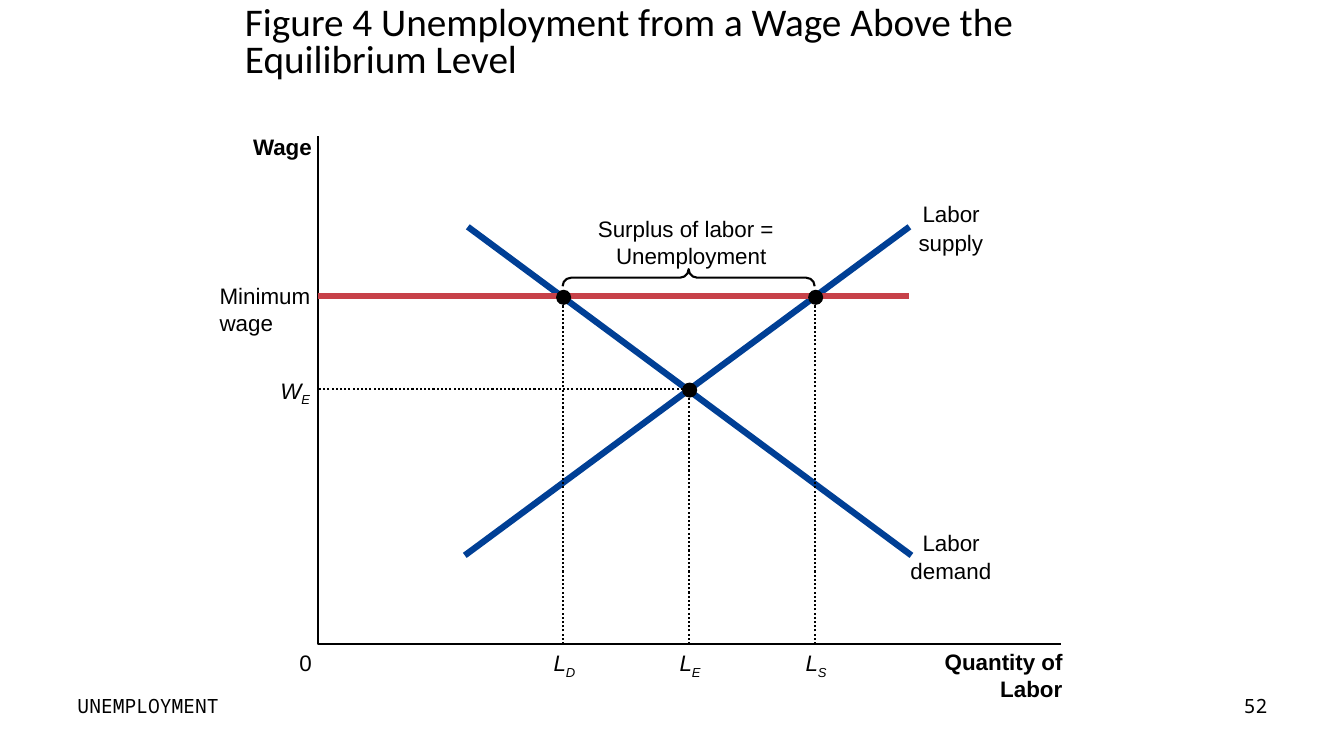
from lxml.etree import SubElement
from pptx import Presentation
from pptx.dml.color import RGBColor
from pptx.enum.dml import MSO_LINE
from pptx.enum.shapes import MSO_CONNECTOR, MSO_SHAPE
from pptx.enum.text import MSO_ANCHOR, MSO_AUTO_SIZE, PP_ALIGN
from pptx.oxml.ns import qn
from pptx.util import Inches, Pt

COLORS = {"black": "000000", "curve": "003F95", "floor": "C74149"}
AXIS_X, AXIS_TOP, AXIS_Y, AXIS_END = 3.15, 1.35, 6.39, 10.52
MIN_WAGE, EQ_WAGE = 2.94, 3.86
L_D, L_E, L_S = 5.58, 6.83, 8.08
LABEL_H = 0.27


def rgb(name):
    """Return the named colour."""
    return RGBColor.from_string(COLORS[name])


def write(tf, text, sub="", size=16, font="Arial", bold=False, italic=False,
          align=PP_ALIGN.LEFT, spacing=None):
    """Write one formatted paragraph, with an optional subscript."""
    p = tf.paragraphs[0]
    p.alignment = align
    p.line_spacing = spacing
    for part in filter(None, (text, sub)):
        r = p.add_run()
        r.text = part
        r.font.size, r.font.name = Pt(size), font
        r.font.bold, r.font.italic = bold, italic
        r.font.color.rgb = rgb("black")
        if part is sub:
            r._r.get_or_add_rPr().set("baseline", "-25000")


def add_text(s, x, y, w, h, text, wrap=True, **fmt):
    """Add a wrapping text box, or a tight one without margins."""
    tf = s.shapes.add_textbox(Inches(x), Inches(y), Inches(w), Inches(h)).text_frame
    tf.word_wrap = wrap
    if not wrap:
        tf.auto_size = MSO_AUTO_SIZE.SHAPE_TO_FIT_TEXT
        tf.margin_left = tf.margin_right = tf.margin_top = tf.margin_bottom = 0
    write(tf, text, **fmt)


def add_label(s, x, y, w, text, **fmt):
    """Add a one-line diagram label."""
    add_text(s, x, y, w, LABEL_H, text, wrap=False, **fmt)


def style_line(line, color="black", width=1.5, dotted=False):
    """Set the colour, width and dash of a line."""
    line.color.rgb = rgb(color)
    line.width = Pt(width)
    if dotted:
        line.dash_style = MSO_LINE.ROUND_DOT


def add_line(s, x1, y1, x2, y2, **fmt):
    """Add a straight line without a shadow."""
    c = s.shapes.add_connector(MSO_CONNECTOR.STRAIGHT, Inches(x1), Inches(y1),
                               Inches(x2), Inches(y2))
    style_line(c.line, **fmt)
    SubElement(c._element.spPr, qn("a:effectLst"))


def add_path(s, points, **fmt):
    """Add an open, unfilled path through the points."""
    pts = [(Inches(x), Inches(y)) for x, y in points]
    fb = s.shapes.build_freeform(*pts[0])
    fb.add_line_segments(pts[1:], close=False)
    sp = fb.convert_to_shape()
    sp.shadow.inherit = False
    sp.fill.background()
    style_line(sp.line, **fmt)


def add_dot(s, x, y, d=0.15):
    """Mark a crossing point of two lines."""
    sp = s.shapes.add_shape(MSO_SHAPE.OVAL, Inches(x + 0.01 - d / 2),
                            Inches(y + 0.01 - d / 2), Inches(d), Inches(d))
    sp.shadow.inherit = False
    sp.fill.solid()
    sp.fill.fore_color.rgb = rgb("black")
    sp.line.fill.background()


def add_brace(s, x1, x2, y, depth):
    """Add a brace that spans x1 to x2 and points up."""
    span = x2 - x1
    sp = s.shapes.add_shape(MSO_SHAPE.LEFT_BRACE, Inches((x1 + x2 - depth) / 2),
                            Inches(y + (depth - span) / 2), Inches(depth), Inches(span))
    sp.rotation = 90
    sp.adjustments[0] = 0.5
    sp.shadow.inherit = False
    sp.fill.background()
    style_line(sp.line)


def add_title(s, text):
    """Place and format the slide title."""
    sp = s.shapes.title
    sp.left, sp.top, sp.width, sp.height = Inches(2.33), Inches(0.06), Inches(9), Inches(0.75)
    sp.text_frame.vertical_anchor = MSO_ANCHOR.MIDDLE
    sp.text_frame.auto_size = MSO_AUTO_SIZE.NONE
    write(sp.text_frame, text, size=28, font="Calibri", spacing=0.8)


def main():
    """Build the slide and save it."""
    prs = Presentation()
    prs.slide_width, prs.slide_height = Inches(13.33), Inches(7.5)
    s = prs.slides.add_slide(prs.slide_layouts[5])
    add_title(s, "Figure 4 Unemployment from a Wage Above the Equilibrium Level")

    for x, y, w, text, bold in (
        (9.37, 6.43, 1.19, "Quantity of", True),
        (9.92, 6.7, 0.62, "Labor", True),
        (2.51, 1.32, 0.59, "Wage", True),
        (2.97, 6.44, 0.12, "0", False),
        (5.93, 2.13, 1.75, "Surplus of labor =", False),
        (6.11, 2.4, 1.51, "Unemployment", False),
        (9.15, 1.99, 0.57, "Labor", False),
        (9.11, 2.27, 0.65, "supply", False),
        (9.15, 5.25, 0.57, "Labor", False),
        (9.03, 5.53, 0.81, "demand", False),
    ):
        add_label(s, x, y, w, text, bold=bold)
    add_brace(s, L_D, L_S, 2.67, 0.17)

    add_line(s, 4.61, 5.51, 9.02, 2.25, color="curve", width=4.5)
    add_line(s, 9.04, 5.51, 4.64, 2.25, color="curve", width=4.5)
    add_path(s, [(L_E, AXIS_Y), (L_E, EQ_WAGE), (AXIS_X, EQ_WAGE)], dotted=True)
    add_path(s, [(AXIS_X, AXIS_TOP), (AXIS_X, AXIS_Y), (AXIS_END, AXIS_Y)])
    add_line(s, AXIS_X, MIN_WAGE, 9.02, MIN_WAGE, color="floor", width=4.5)
    add_text(s, 2.08, 2.75, 1.17, 0.64, "Minimum wage")
    add_label(s, 2.78, 3.74, 0.31, "W", sub="E", italic=True)

    for x in (L_D, L_S):
        add_line(s, x, AXIS_Y, x, MIN_WAGE, dotted=True)
    for x, y, sub in ((L_E, EQ_WAGE, "E"), (L_D, MIN_WAGE, "D"), (L_S, MIN_WAGE, "S")):
        add_dot(s, x, y)
        add_label(s, x - 0.09, 6.44, 0.23, "L", sub=sub, italic=True)

    add_text(s, 0.67, 6.83, 8.11, 0.52, "UNEMPLOYMENT", size=14, font="Noto Sans Mono")
    add_text(s, 9.56, 6.83, 3.11, 0.52, "52", size=14, font="Noto Sans Mono",
             align=PP_ALIGN.RIGHT)
    prs.save("out.pptx")


if __name__ == "__main__":
    main()
